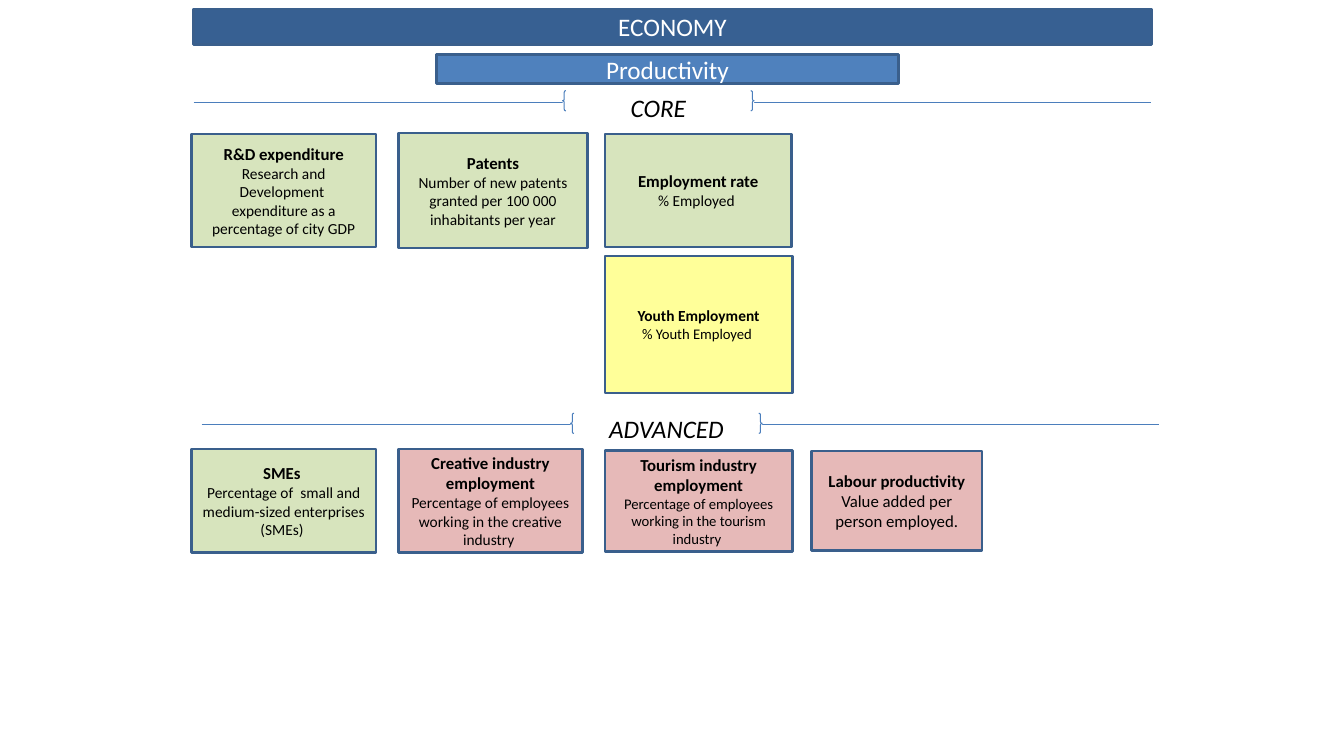
"""Build the economy and productivity indicator slide."""
from lxml import etree
from pptx import Presentation
from pptx.dml.color import RGBColor
from pptx.enum.shapes import MSO_CONNECTOR, MSO_SHAPE
from pptx.enum.text import MSO_ANCHOR, MSO_AUTO_SIZE, PP_ALIGN
from pptx.oxml.ns import qn
from pptx.util import Inches, Pt

RECTANGLE = MSO_SHAPE.RECTANGLE
BRACES = MSO_SHAPE.BRACE_PAIR if hasattr(MSO_SHAPE, "BRACE_PAIR") else MSO_SHAPE.DOUBLE_BRACE
STRAIGHT = MSO_CONNECTOR.STRAIGHT
MIDDLE, TOP = MSO_ANCHOR.MIDDLE, MSO_ANCHOR.TOP
CENTER = PP_ALIGN.CENTER
GROW = MSO_AUTO_SIZE.SHAPE_TO_FIT_TEXT

FONT = "Calibri"
COLORS = {
    "navy": "376092", "blue": "4F81BD", "border": "3A5F8C", "rule": "4B7EBC",
    "green": "D7E4BD", "yellow": "FFFF99", "pink": "E6B9B8",
    "white": "FFFFFF", "black": "000000",
}

BANNERS = [
    ("ECONOMY", "navy", (1.92, 0.09, 9.5, 0.35)),
    ("Productivity", "blue", (4.33, 0.54, 4.58, 0.29)),
]

SECTIONS = [
    ("CORE", 1.92, 1.02, 0.87, 0.9),
    ("ADVANCED", 2.0, 4.21, 4.05, 4.1),
]
RULE_WIDTH = 9.5
LABEL_INDENT, LABEL_WIDTH, LABEL_HEIGHT, BRACE_HEIGHT = 3.66, 1.9, 0.4, 0.2

FIRST_COLUMN, COLUMN_PITCH = 1.9, 2.05
ROW_CENTERS = [1.89, 3.22, 4.97]
CARDS = [
    (0, 0, 1.83, 1.12, "green", "R&D expenditure", 12,
     "Research and Development  expenditure as a percentage of city GDP", 11),
    (1, 0, 1.88, 1.14, "green", "Patents", 12,
     "Number of new patents granted per 100 000 inhabitants per year", 11),
    (2, 0, 1.85, 1.12, "green", "Employment rate", 12, "% Employed ", 11),
    (2, 1, 1.86, 1.36, "yellow", "Youth Employment", 11, "% Youth Employed ", 10.5),
    (0, 2, 1.83, 1.03, "green", "SMEs ", 12,
     "Percentage of  small and medium-sized enterprises (SMEs) ", 11),
    (1, 2, 1.83, 1.03, "pink", "Creative industry employment", 12,
     "Percentage of employees working in the creative industry ", 11),
    (2, 2, 1.86, 1.0, "pink", "Tourism industry employment", 12,
     "Percentage of employees working in the tourism industry ", 10.5),
    (3, 2, 1.69, 0.99, "pink", "Labour productivity", 12,
     "Value added per person employed.", 12),
]


def rgb(name):
    return RGBColor.from_string(COLORS[name])


def add_box(shapes, kind, box, fill=None, line=None, line_width=2):
    shape = shapes.add_shape(kind, *(Inches(value) for value in box))
    shape.shadow.inherit = False
    if fill:
        shape.fill.solid()
        shape.fill.fore_color.rgb = rgb(fill)
    else:
        shape.fill.background()
    if line:
        shape.line.color.rgb = rgb(line)
        shape.line.width = Pt(line_width)
    else:
        shape.line.fill.background()
    return shape


def write(shape, runs, color, anchor=MIDDLE):
    frame = shape.text_frame
    frame.word_wrap = True
    frame.vertical_anchor = anchor
    paragraph = frame.paragraphs[0]
    paragraph.alignment = CENTER
    for index, (text, size, bold, italic) in enumerate(runs):
        if index:
            paragraph.add_line_break()
        run = paragraph.add_run()
        run.text = text
        run.font.name = FONT
        run.font.size = Pt(size)
        run.font.bold = bold
        run.font.italic = italic
        run.font.color.rgb = rgb(color)


def add_banners(shapes):
    for text, fill, box in BANNERS:
        banner = add_box(shapes, RECTANGLE, box, fill, "border")
        write(banner, [(text, 18, False, False)], "white")


def add_section(shapes, text, left, rule_top, label_top, brace_top):
    rule = shapes.add_connector(STRAIGHT, Inches(left), Inches(rule_top),
                                Inches(left + RULE_WIDTH), Inches(rule_top))
    rule.line.color.rgb = rgb("rule")
    rule.line.width = Pt(0.75)
    etree.SubElement(rule._element.spPr, qn("a:effectLst"))
    label_left = left + LABEL_INDENT
    label = add_box(shapes, RECTANGLE,
                    (label_left, label_top, LABEL_WIDTH, LABEL_HEIGHT), "white")
    write(label, [(text, 18, False, True)], "black", TOP)
    label.text_frame.auto_size = GROW
    add_box(shapes, BRACES, (label_left, brace_top, LABEL_WIDTH, BRACE_HEIGHT),
            line="rule", line_width=0.75)


def add_card(shapes, column, row, width, height, fill, title, title_size, body, body_size):
    left = FIRST_COLUMN + column * COLUMN_PITCH
    top = ROW_CENTERS[row] - height / 2
    card = add_box(shapes, RECTANGLE, (left, top, width, height), fill, "border")
    write(card, [(title, title_size, True, False), (body, body_size, False, False)], "black")


def main():
    presentation = Presentation()
    presentation.slide_width = Inches(13.33)
    presentation.slide_height = Inches(7.5)
    slide = presentation.slides.add_slide(presentation.slide_layouts[6])
    add_banners(slide.shapes.add_group_shape().shapes)
    for section in SECTIONS:
        add_section(slide.shapes.add_group_shape().shapes, *section)
    for card in CARDS:
        add_card(slide.shapes, *card)
    presentation.save("out.pptx")


if __name__ == "__main__":
    main()
